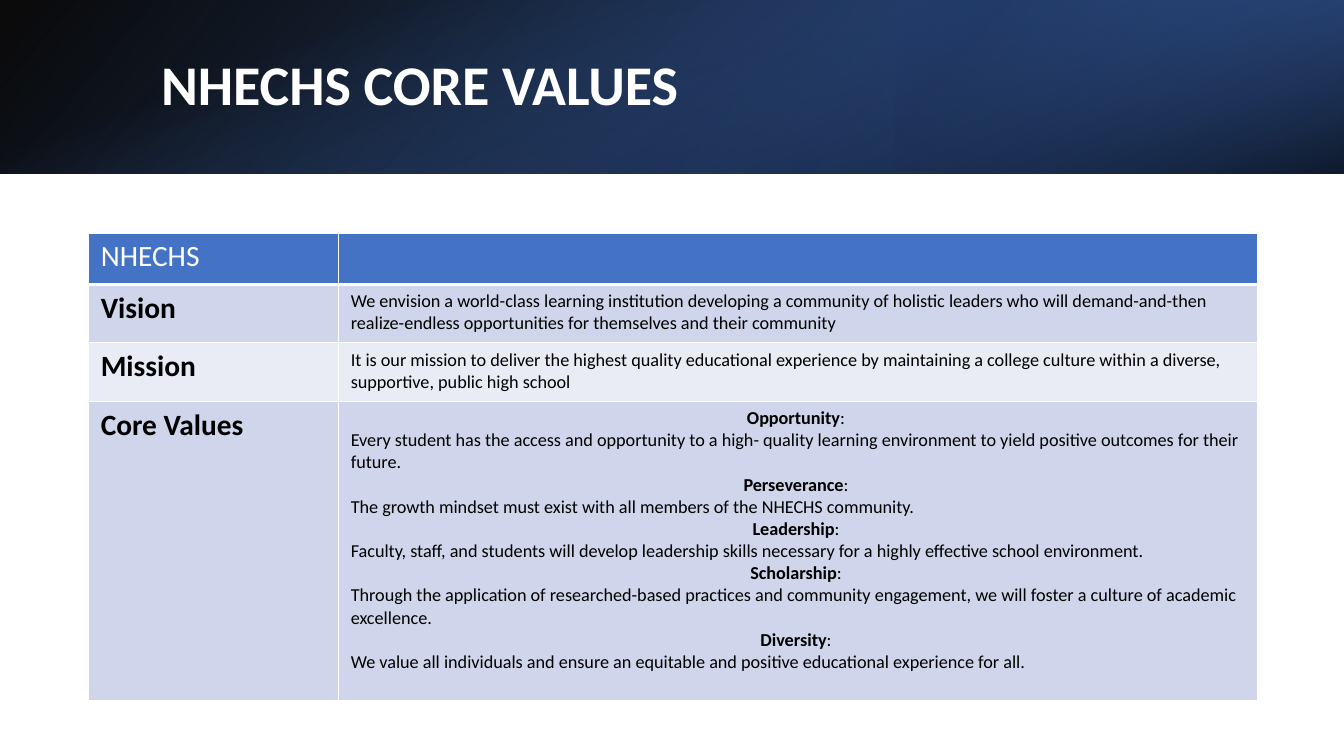
from lxml import etree
from pptx import Presentation
from pptx import util as u
from pptx.dml.color import RGBColor
from pptx.enum import shapes, text
from pptx.oxml import ns

FONT = "Calibri"
WHITE, BLACK, BLUE = "FFFFFF", "000000", "4472C4"
BAND_DARK, BAND_LIGHT = "CFD5EA", "E9EBF5"

STATEMENTS = [
    ("Vision", "We envision a world-class learning institution developing a community of holistic "
               "leaders who will demand-and-then realize-endless opportunities for themselves and "
               "their community"),
    ("Mission", "It is our mission to deliver the highest quality educational experience by "
                "maintaining a college culture within a diverse, supportive, public high school"),
]
CORE_VALUES = [
    ("Opportunity", "Every student has the access and opportunity to a high- quality learning "
                    "environment to yield positive outcomes for their future."),
    ("Perseverance", "The growth mindset must exist with all members of the NHECHS community."),
    ("Leadership", "Faculty, staff, and students will develop leadership skills necessary for a "
                   "highly effective school environment."),
    ("Scholarship", "Through the application of researched-based practices and community "
                    "engagement, we will foster a culture of academic excellence."),
    ("Diversity", "We value all individuals and ensure an equitable and positive educational "
                  "experience for all."),
]


def color(value):
    return RGBColor.from_string(value)


def add_span(para, words, size=13, bold=False, ink=BLACK):
    span = para.add_run()
    span.text = words
    span.font.name = FONT
    span.font.size = u.Pt(size)
    span.font.bold = bold
    span.font.color.rgb = color(ink)


def add_gradient(page, box, stops, angle, rotation=0, flipped=False):
    """Rectangle with a clockwise gradient; each stop is (position, colour, opacity)."""
    panel = page.shapes.add_shape(shapes.MSO_SHAPE.RECTANGLE, *(u.Cm(side) for side in box))
    panel.shadow.inherit = False
    panel.line.fill.background()
    panel.rotation = rotation
    if flipped:
        panel._element.spPr.xfrm.set("flipH", "1")
    panel.fill.gradient()
    panel.fill.gradient_angle = 360 - angle
    for stop, (position, tint, _) in zip(panel.fill.gradient_stops, stops):
        stop.position = position / 100
        stop.color.rgb = color(tint)
    tints = panel._element.spPr.iter(ns.qn("a:srgbClr"))
    for tint, (_, _, opacity) in zip(list(tints), stops):
        etree.SubElement(tint, ns.qn("a:alpha")).set("val", str(opacity * 1000))


def add_banner(page, left, top, width, height):
    # Layered gradients
    add_gradient(page, (left, top, width, height),
                 [(0, BLACK, 96), (100, "2F5597", 100)], 140, flipped=True)
    add_gradient(page, (left + width * 2 / 3, top, width / 3, height),
                 [(19, "203864", 68), (100, BLUE, 79)], 320, rotation=180, flipped=True)
    offset = (width - height) / 2
    add_gradient(page, (left + offset, top - offset, height, width),
                 [(23, BLUE, 0), (99, BLACK, 74)], 340, rotation=90)

    # Title
    title = page.shapes.add_textbox(u.Cm(left + 3.81), u.Cm(top + 0.97), u.Cm(27.89), u.Cm(2.44))
    frame = title.text_frame
    frame.word_wrap = True
    frame.vertical_anchor = text.MSO_ANCHOR.MIDDLE
    para = frame.paragraphs[0]
    para.line_spacing = 0.9
    add_span(para, "NHECHS CORE VALUES", 40, True, WHITE)


def format_cell(cell, fill, top=1, bottom=1):
    cell.margin_left = cell.margin_right = u.Cm(0.3)
    cell.margin_top = cell.margin_bottom = u.Cm(0.15)
    properties = cell._tc.get_or_add_tcPr()
    for side, points in (("L", 1), ("R", 1), ("T", top), ("B", bottom)):
        border = etree.SubElement(properties, ns.qn(f"a:ln{side}"), w=str(u.Pt(points)))
        solid = etree.SubElement(border, ns.qn("a:solidFill"))
        etree.SubElement(solid, ns.qn("a:srgbClr"), val=WHITE)
    cell.fill.solid()
    cell.fill.fore_color.rgb = color(fill)


def add_values_table(page, left, top, columns, rows):
    frame = page.shapes.add_table(len(rows), len(columns), u.Cm(left), u.Cm(top),
                                  u.Cm(sum(columns)), u.Cm(sum(rows)))
    table = frame.table
    for column, width in zip(table.columns, columns):
        column.width = u.Cm(width)
    for row, height in zip(table.rows, rows):
        row.height = u.Cm(height)

    # Fills and borders, with a thick rule under the header
    for number, fill in enumerate((BLUE, BAND_DARK, BAND_LIGHT, BAND_DARK)):
        for cell in table.rows[number].cells:
            format_cell(cell, fill, top=3 if number == 1 else 1, bottom=3 if number == 0 else 1)

    # Header, vision and mission
    def first_para(row, column):
        return table.cell(row, column).text_frame.paragraphs[0]

    add_span(first_para(0, 0), "NHECHS", 21, ink=WHITE)
    for number, (label, statement) in enumerate(STATEMENTS, 1):
        add_span(first_para(number, 0), label, 21, True)
        add_span(first_para(number, 1), statement)

    # Core values
    add_span(first_para(3, 0), "Core Values", 21, True)
    body = table.cell(3, 1).text_frame
    for number, (value, meaning) in enumerate(CORE_VALUES):
        heading = body.add_paragraph() if number else body.paragraphs[0]
        heading.alignment = text.PP_ALIGN.CENTER
        add_span(heading, value, bold=True)
        add_span(heading, ": ")
        add_span(body.add_paragraph(), meaning)


def main():
    deck = Presentation()
    deck.slide_width, deck.slide_height = u.Cm(33.87), u.Cm(19.05)
    page = deck.slides.add_slide(deck.slide_layouts[6])
    add_banner(page, 0, 0, 33.87, 4.38)
    add_values_table(page, 2.24, 5.87, columns=(6.3, 23.14), rows=(1.3, 1.47, 1.47, 7.54))
    deck.save("out.pptx")


if __name__ == "__main__":
    main()
